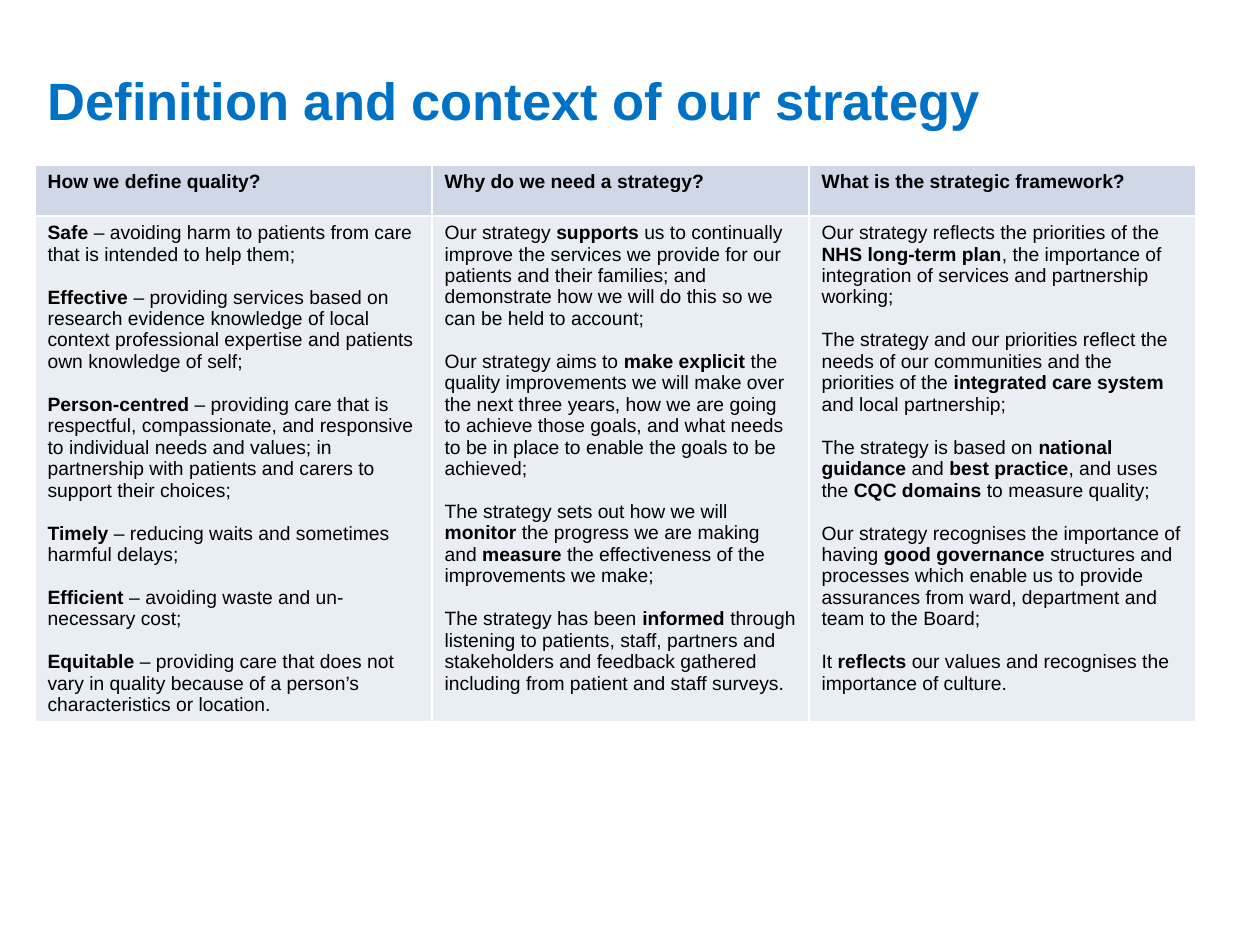
from lxml.etree import SubElement
from pptx import Presentation
from pptx.dml.color import RGBColor
from pptx.enum.text import MSO_ANCHOR, PP_ALIGN
from pptx.oxml.ns import qn
from pptx.util import Emu, Pt

BLUE = RGBColor(0x00, 0x72, 0xC6)
BLACK = RGBColor(0x00, 0x00, 0x00)
WHITE = RGBColor(0xFF, 0xFF, 0xFF)
HEADER_FILL = RGBColor(0xD0, 0xD8, 0xE8)
BODY_FILL = RGBColor(0xE9, 0xED, 0xF4)

HEADING = "Definition and context of our strategy"
COLUMNS = [
    (397, "How we define quality?", [
        "**Safe **– avoiding harm to patients from care that is intended to help them;",
        "**Effective **– providing services based on research evidence knowledge of local "
        "context professional expertise and patients own knowledge of self;",
        "**Person-centred **– providing care that is respectful, compassionate, and responsive "
        "to individual needs and values; in partnership with patients and carers to support "
        "their choices;",
        "**Timely **– reducing waits and sometimes harmful delays;",
        "**Efficient **– avoiding waste and un-necessary cost;",
        "**Equitable **– providing care that does not vary in quality because of a person’s "
        "characteristics or location.",
    ]),
    (377, "Why do we need a strategy?", [
        "Our strategy **supports **us to continually improve the services we provide for our "
        "patients and their families; and demonstrate how we will do this so we can be held "
        "to account;",
        "Our strategy aims to **make explicit **the quality improvements we will make over the "
        "next three years, how we are going to achieve those goals, and what needs to be in "
        "place to enable the goals to be achieved;",
        "The strategy sets out how we will **monitor** the progress we are making and "
        "**measure** the effectiveness of the improvements we make;",
        "The strategy has been **informed **through listening to patients, staff, partners and "
        "stakeholders and feedback gathered including from patient and staff surveys.",
    ]),
    (387, "What is the strategic framework?", [
        "Our strategy reflects the priorities of the **NHS long-term plan**, the importance of "
        "integration of services and partnership working;",
        "The strategy and our priorities reflect the needs of our communities and the "
        "priorities of the **integrated care system **and local partnership;",
        "The strategy is based on **national guidance** and **best practice**, and uses the "
        "**CQC domains **to measure quality;",
        "Our strategy recognises the importance of having **good governance **structures and "
        "processes which enable us to provide assurances from ward, department and team to "
        "the Board;",
        "It **reflects** our values and recognises the importance of culture.",
    ]),
]


class StrategySlide:
    scale = 914400 / 126
    title_format = {"name": "Arial", "size": Pt(30), "bold": True}
    text_format = {"name": "Arial", "size": Pt(11)}
    paragraph_gap = Pt(12.3)

    def __init__(self, presentation):
        self.slide = presentation.slides.add_slide(presentation.slide_layouts[5])

    @classmethod
    def px(cls, length):
        return Emu(round(length * cls.scale))

    def format_font(self, font, values, color):
        for attribute, value in values.items():
            setattr(font, attribute, value)
        font.color.rgb = color

    def title(self, text, left, top, width, height):
        heading = self.slide.shapes.title
        box = {"left": left, "top": top, "width": width, "height": height}
        for attribute, length in box.items():
            setattr(heading, attribute, self.px(length))
        frame = heading.text_frame
        frame.text = text
        frame.word_wrap = True
        frame.vertical_anchor = MSO_ANCHOR.MIDDLE
        paragraph = frame.paragraphs[0]
        paragraph.alignment = PP_ALIGN.LEFT
        self.format_font(paragraph.runs[0].font, self.title_format, BLUE)

    def table(self, columns, left, top, row_heights):
        widths = [width for width, _, _ in columns]
        table = self.slide.shapes.add_table(
            len(row_heights), len(columns), self.px(left), self.px(top),
            self.px(sum(widths)), self.px(sum(row_heights))).table
        table.first_row = table.horz_banding = False
        for row, height in zip(table.rows, row_heights):
            row.height = self.px(height)
        for index, (width, question, answers) in enumerate(columns):
            table.columns[index].width = self.px(width)
            self.cell(table.cell(0, index), [f"**{question}**"], HEADER_FILL)
            self.cell(table.cell(1, index), answers, BODY_FILL)

    def cell(self, cell, texts, fill):
        self.borders(cell)
        cell.fill.solid()
        cell.fill.fore_color.rgb = fill
        for index, text in enumerate(texts):
            frame = cell.text_frame
            paragraph = frame.add_paragraph() if index else frame.paragraphs[0]
            if index:
                paragraph.space_before = self.paragraph_gap
            for part, words in enumerate(text.split("**")):
                if words:
                    run = paragraph.add_run()
                    run.text = words
                    run.font.bold = part % 2 == 1
                    self.format_font(run.font, self.text_format, BLACK)

    def borders(self, cell):
        properties = cell._tc.get_or_add_tcPr()
        for side in ("a:lnL", "a:lnR", "a:lnT", "a:lnB"):
            line = SubElement(properties, qn(side), w=str(Pt(1)))
            solid = SubElement(line, qn("a:solidFill"))
            SubElement(solid, qn("a:srgbClr"), val=str(WHITE))


def main():
    presentation = Presentation()
    presentation.slide_width = StrategySlide.px(1260)
    presentation.slide_height = StrategySlide.px(945)
    strategy = StrategySlide(presentation)
    strategy.title(HEADING, 35, 21, 983, 158)
    strategy.table(COLUMNS, 35, 165, [51, 504])
    presentation.save("out.pptx")


if __name__ == "__main__":
    main()
